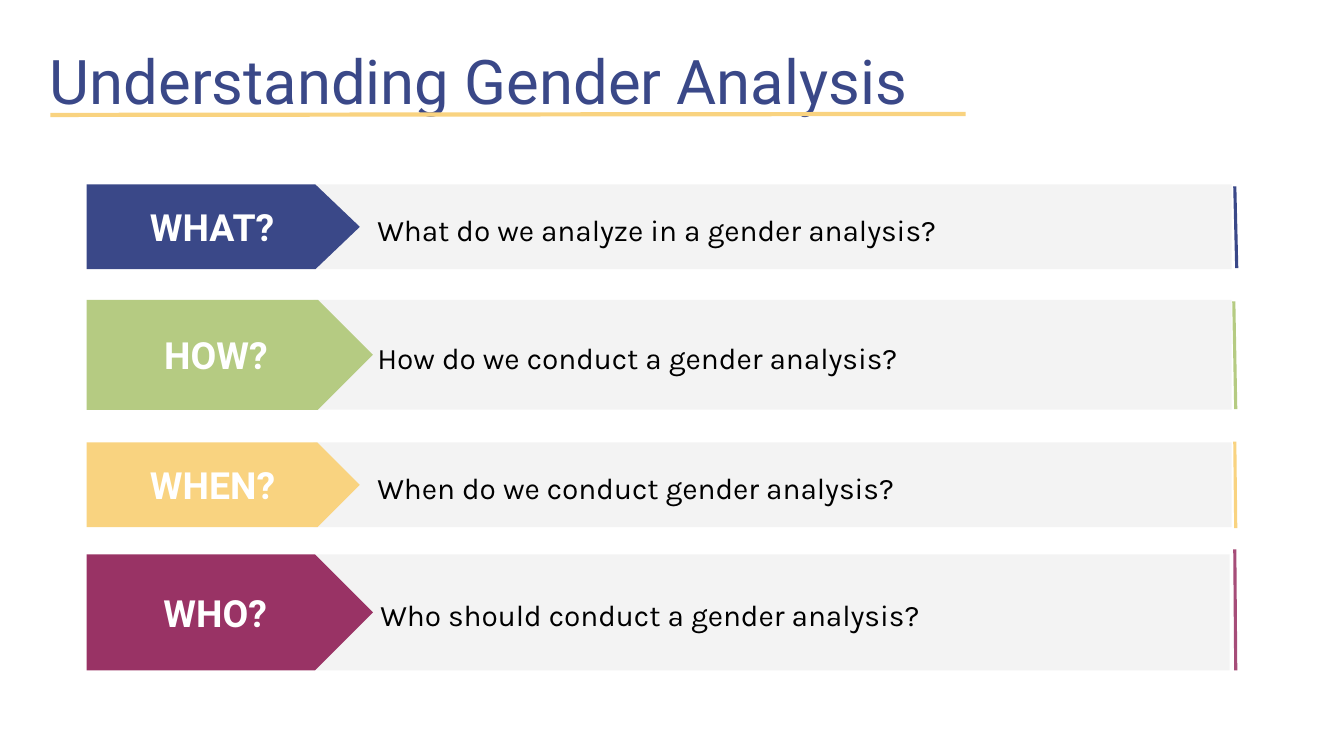
from dataclasses import dataclass
from lxml.etree import SubElement
from pptx import Presentation
from pptx.dml.color import RGBColor
from pptx.enum.shapes import MSO_CONNECTOR, MSO_SHAPE
from pptx.enum.text import MSO_ANCHOR, MSO_AUTO_SIZE, PP_ALIGN
from pptx.oxml.ns import qn
from pptx.util import Pt

COLORS = {
    "navy": "3A4888",
    "green": "B5CB82",
    "yellow": "F9D380",
    "plum": "993365",
    "rose": "A64D79",
    "band": "F3F3F3",
    "white": "FFFFFF",
    "black": "000000",
}


@dataclass
class Question:
    label: str
    text: str
    color: str
    top: float
    height: float
    arrow_width: float
    rule: tuple
    rule_color: str
    point: float = 0.5
    band_left: float = 223.9
    band_width: float = 655.9


class SlideBuilder:
    heading_font = "Roboto"
    body_font = "Karla"
    inset = 9.6

    def __init__(self, presentation):
        self.slide = presentation.slides.add_slide(presentation.slide_layouts[5])

    def color(self, name):
        return RGBColor.from_string(COLORS[name])

    def add_text(self, shape, text, font, size, color, anchor, align, bold=False):
        frame = shape.text_frame
        frame.word_wrap = True
        frame.auto_size = MSO_AUTO_SIZE.NONE
        frame.vertical_anchor = anchor
        frame.margin_left = frame.margin_right = Pt(self.inset)
        frame.margin_top = frame.margin_bottom = Pt(self.inset)
        paragraph = frame.paragraphs[0]
        paragraph.alignment = align
        run = paragraph.add_run()
        run.text = text
        run.font.name = font
        run.font.size = Pt(size)
        run.font.bold = bold
        run.font.color.rgb = self.color(color)
        return paragraph

    def title(self, text, left, top, width, height):
        shape = self.slide.shapes.title
        shape.left, shape.top = Pt(left), Pt(top)
        shape.width, shape.height = Pt(width), Pt(height)
        self.add_text(shape, text, self.heading_font, 44, "navy",
                      MSO_ANCHOR.TOP, PP_ALIGN.LEFT)

    def block(self, kind, left, top, width, height, color):
        shape = self.slide.shapes.add_shape(
            kind, Pt(left), Pt(top), Pt(width), Pt(height))
        shape.shadow.inherit = False
        shape.fill.solid()
        shape.fill.fore_color.rgb = self.color(color)
        shape.line.fill.background()
        return shape

    def band(self, question):
        shape = self.block(MSO_SHAPE.RECTANGLE, question.band_left, question.top,
                           question.band_width, question.height, "band")
        paragraph = self.add_text(shape, question.text, self.body_font, 21.3, "black",
                                  MSO_ANCHOR.MIDDLE, PP_ALIGN.LEFT)
        paragraph.line_spacing = 1.15
        properties = paragraph._p.get_or_add_pPr()
        properties.set("marL", str(Pt(36)))
        properties.set("indent", "0")

    def arrow(self, question):
        shape = self.block(MSO_SHAPE.PENTAGON, 61.9, question.top,
                           question.arrow_width, question.height, question.color)
        shape.adjustments[0] = question.point
        self.add_text(shape, question.label, self.heading_font, 26.7, "white",
                      MSO_ANCHOR.MIDDLE, PP_ALIGN.CENTER, bold=True)

    def line(self, points, color, width):
        connector = self.slide.shapes.add_connector(
            MSO_CONNECTOR.STRAIGHT, *(Pt(value) for value in points))
        connector.line.color.rgb = self.color(color)
        connector.line.width = Pt(width)
        SubElement(connector._element.spPr, qn("a:effectLst"))

    def question(self, question):
        self.band(question)
        self.arrow(question)
        self.line(question.rule, question.rule_color, 2.25)


QUESTIONS = [
    Question("WHAT?", "What do we analyze in a gender analysis?", "navy",
             131.8, 60.5, 195.1, (882, 133.2, 883.4, 191.5), "navy", point=0.524),
    Question("HOW?", "How do we conduct a gender analysis?", "green",
             214.2, 78.5, 204.5, (881.3, 215.3, 882.7, 292.3), "green"),
    Question("WHEN?", "When do we conduct gender analysis?", "yellow",
             316.1, 60.5, 195.1, (882, 315.4, 882.7, 377.3), "yellow"),
    Question("WHO?", "Who should conduct a gender analysis?", "plum",
             396, 82.8, 204.5, (882, 392.4, 882.7, 478.8), "rose",
             band_left=226.1, band_width=652.3),
]


def main():
    presentation = Presentation()
    presentation.slide_width = Pt(960)
    presentation.slide_height = Pt(540)
    builder = SlideBuilder(presentation)
    builder.title("Understanding Gender Analysis", 26, 20.9, 868.3, 60.5)
    for question in QUESTIONS:
        builder.question(question)
    builder.line((36, 82.1, 689.8, 81.4), "yellow", 3)
    presentation.save("out.pptx")


if __name__ == "__main__":
    main()
